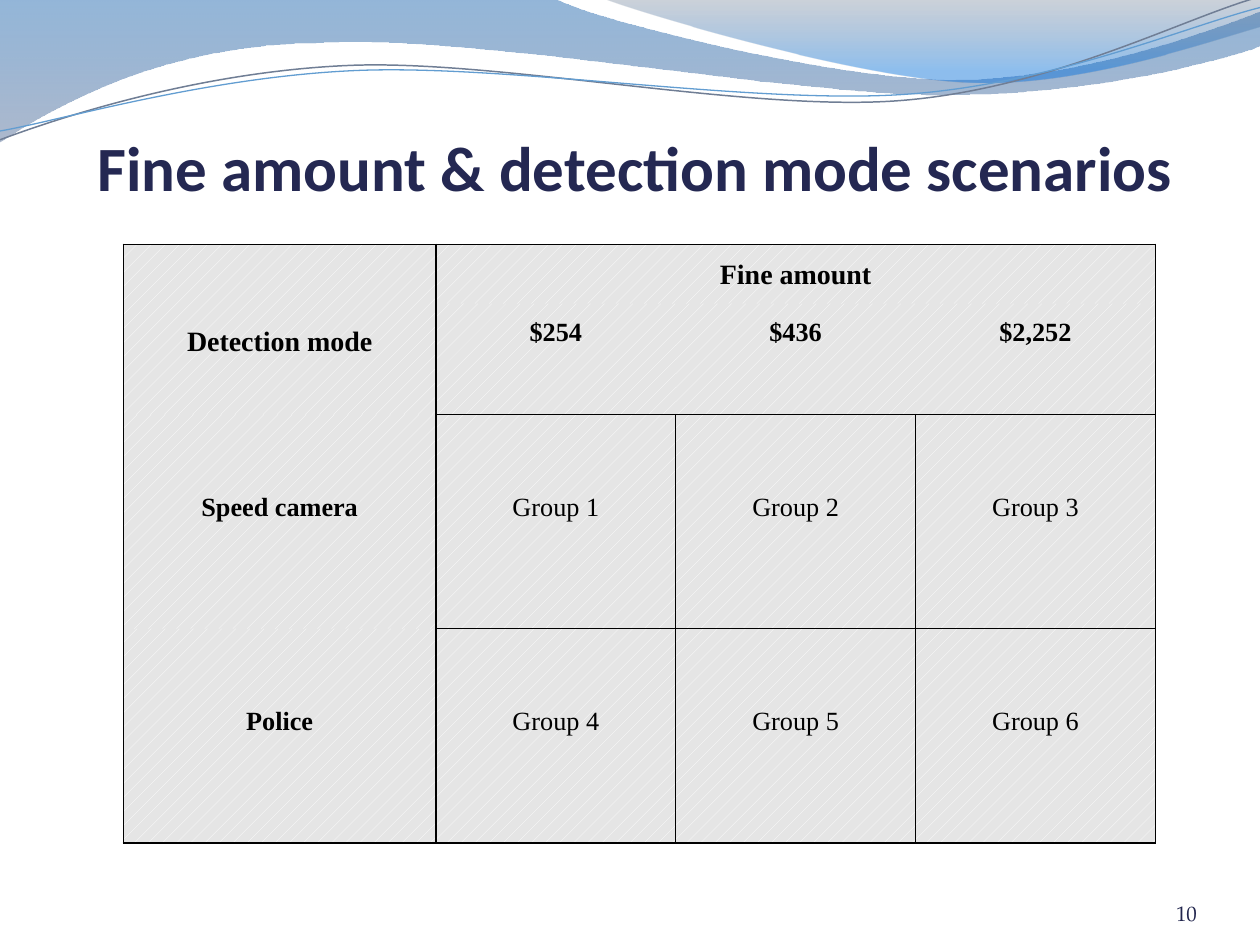
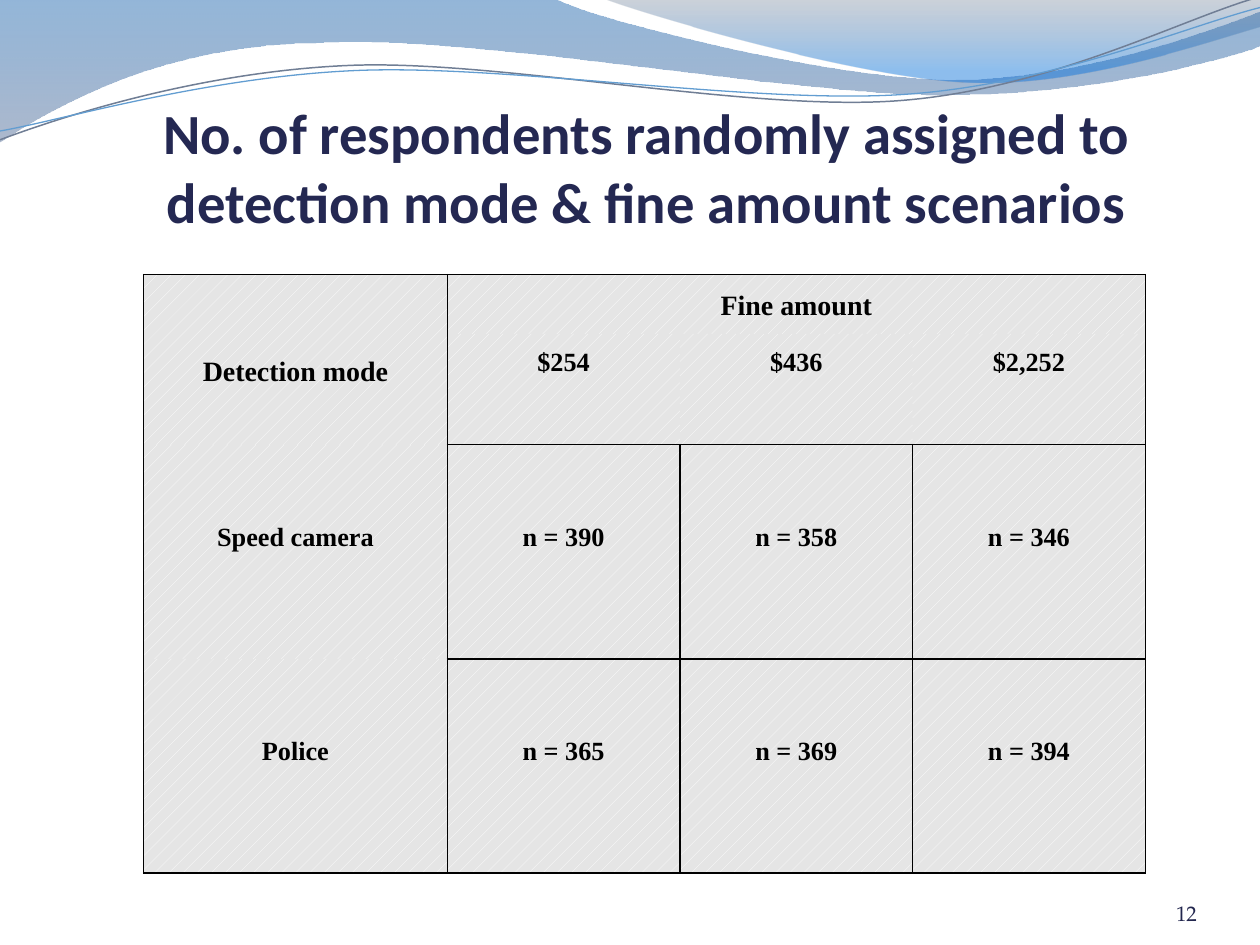
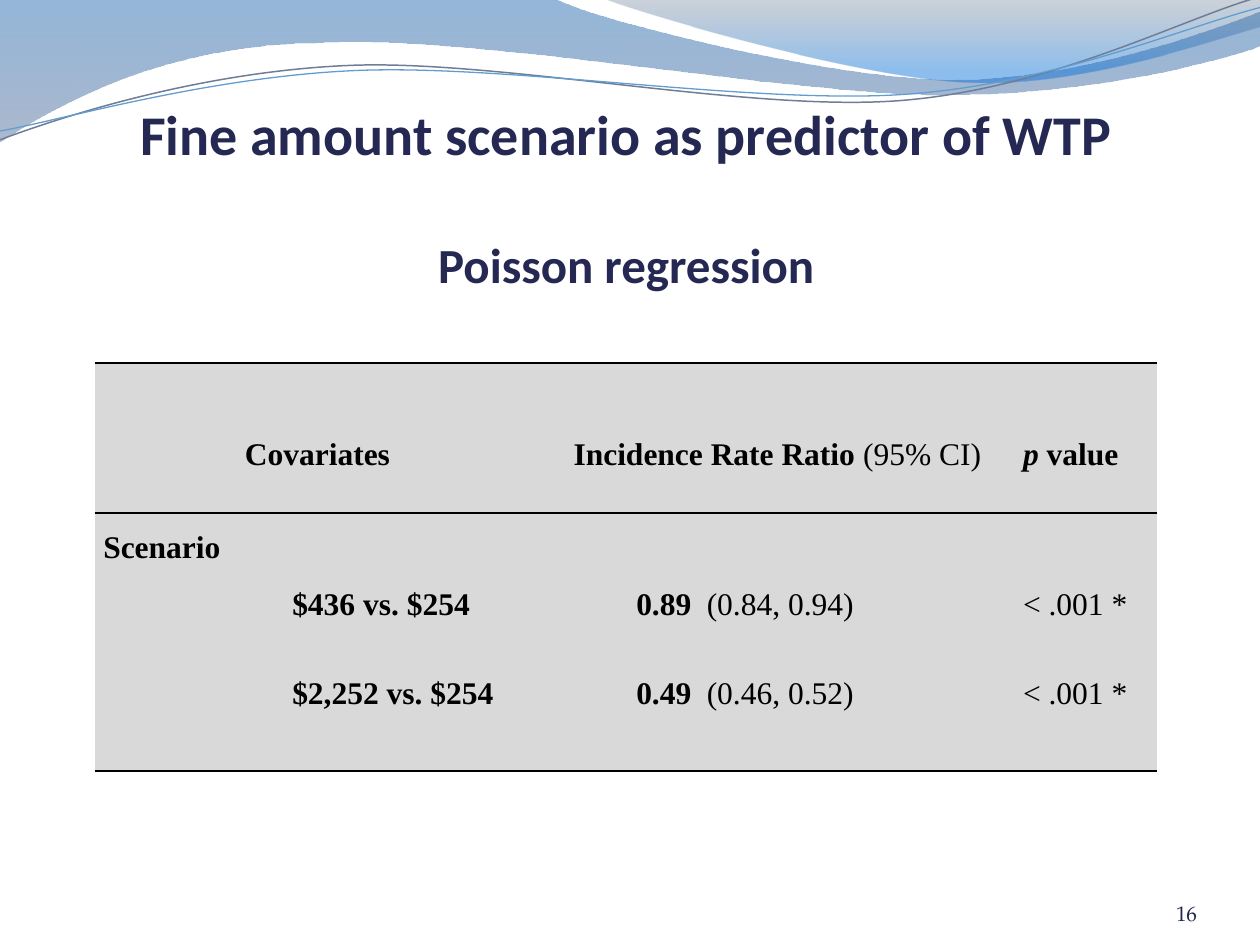
from lxml import etree
from pptx import Presentation
from pptx.dml.color import RGBColor
from pptx.enum.dml import MSO_PATTERN
from pptx.enum.text import MSO_ANCHOR, PP_ALIGN
from pptx.oxml.ns import qn
from pptx.util import Inches, Pt

TOP, MIDDLE, BOTTOM = MSO_ANCHOR.TOP, MSO_ANCHOR.MIDDLE, MSO_ANCHOR.BOTTOM
LEFT, CENTER, RIGHT = PP_ALIGN.LEFT, PP_ALIGN.CENTER, PP_ALIGN.RIGHT
HATCH = MSO_PATTERN.PERCENT_10

TITLE_FONT, NUMBER_FONT, TABLE_FONT = "Calibri", "TeX Gyre Pagella", "Times New Roman"
NAVY, NUMBER_NAVY, BLACK, WHITE = "242852", "22264E", "000000", "FFFFFF"
HATCH_GREY, FLAT_GREY = "E5E5E5", "D9D9D9"
PLAIN_TABLE = "{2D5ABB26-0587-4C30-8999-92F81FD0307C}"

BANDS = [
    ((0, -0.01),
     [[(4.4, -0.01)],
      [(4.76, 0.17), (6.64, 0.63), (7.58, 0.63)],
      [(8.53, 0.63), (9.58, 0.26), (10, 0.09)],
      [(10.01, 0.36)],
      [(9.83, 0.44), (8.7, 0.76), (7.46, 0.75)],
      [(6.22, 0.75), (3.82, 0.28), (2.57, 0.34)],
      [(1.29, 0.35), (0.46, 0.83), (-0.01, 1.13)],
      [(0, -0.01)]],
     [(0, "125EAA", 45), (1, "697FA4", 55)]),
    ((4.79, -0.01),
     [[(5.09, 0.11), (6.82, 0.62), (7.69, 0.65)],
      [(8.56, 0.69), (9.61, 0.32), (10, 0.21)],
      [(10, 0)],
      [(4.79, -0.01)]],
     [(0, "596982", 30), (0.8, "0670DA", 45)]),
]
WAVES = [
    ((0, 1.11),
     [[(0.48, 0.93), (1.58, 0.57), (2.77, 0.52)],
      [(3.95, 0.47), (5.93, 0.89), (7.13, 0.8)],
      [(8.33, 0.71), (9.38, 0.15), (9.98, -0.02)]],
     "707E95", 0.85),
    ((0, 1.04),
     [[(0.47, 0.96), (1.64, 0.61), (2.83, 0.56)],
      [(4.03, 0.51), (5.97, 0.83), (7.17, 0.75)],
      [(8.36, 0.67), (9.41, 0.21), (10, 0.06)]],
     "629DD1", 0.75),
]


def color(value):
    return RGBColor.from_string(value)


def add_outline(page, start, segments, closed):
    builder = page.shapes.build_freeform(*map(Inches, start))
    builder.add_line_segments(
        [(Inches(x), Inches(y)) for segment in segments for x, y in segment], close=closed)
    shape = builder.convert_to_shape()
    shape.shadow.inherit = False
    steps = iter(list(shape._element.iter(qn("a:lnTo"))))
    for segment in segments:
        curve = next(steps)
        if len(segment) == 3:
            curve.tag = qn("a:cubicBezTo")
            for _ in range(2):
                extra = next(steps)
                curve.append(extra[0])
                extra.getparent().remove(extra)
    return shape


def add_header_waves(page):
    for start, segments, stops in BANDS:
        band = add_outline(page, start, segments, True)
        band.line.fill.background()
        band.fill.gradient()
        band.fill.gradient_angle = 270
        for stop, (position, value, _) in zip(band.fill.gradient_stops, stops):
            stop.position = position
            stop.color.rgb = color(value)
        tones = band._element.spPr.iter(qn("a:srgbClr"))
        for tone, (_, _, opacity) in zip(tones, stops):
            etree.SubElement(tone, qn("a:alpha"), val=str(opacity * 1000))
    for start, segments, value, weight in WAVES:
        wave = add_outline(page, start, segments, False)
        wave.fill.background()
        wave.line.color.rgb = color(value)
        wave.line.width = Pt(weight)


def style_font(font, name, size, value, bold=None):
    font.name = name
    font.size = Pt(size)
    font.color.rgb = color(value)
    font.bold = bold


def add_text_frame(page, box, top_inset=0.0):
    frame = page.shapes.add_textbox(*map(Inches, box)).text_frame
    frame.word_wrap = True
    frame.vertical_anchor = BOTTOM
    frame.margin_left = frame.margin_right = frame.margin_bottom = 0
    frame.margin_top = Inches(top_inset)
    return frame


def add_title(page, box, lines, gap=0):
    frame = add_text_frame(page, box, 0.05)
    for index, (text, size) in enumerate(lines):
        para = frame.add_paragraph() if index else frame.paragraphs[0]
        para.text = text
        para.alignment = CENTER
        if index:
            para.space_before = Pt(gap)
        style_font(para.font, TITLE_FONT, size, NAVY, True)


def add_page_number(page, number):
    para = add_text_frame(page, (8.67, 6.95, 0.83, 0.4)).paragraphs[0]
    para.text = str(number)
    para.alignment = RIGHT
    style_font(para.font, NUMBER_FONT, 12, NUMBER_NAVY)


def add_plain_table(page, box, widths, heights):
    frame = page.shapes.add_table(len(heights), len(widths), *map(Inches, box))
    table = frame.table
    table.first_row = table.horz_banding = False
    table._tbl.tblPr.find(qn("a:tableStyleId")).text = PLAIN_TABLE
    for column, width in zip(table.columns, widths):
        column.width = Inches(width)
    for row, height in zip(table.rows, heights):
        row.height = Inches(height)
    return table


def set_borders(cell, sides):
    properties = cell._tc.get_or_add_tcPr()
    for side in "LRTB":
        line = etree.SubElement(properties, qn(f"a:ln{side}"), w=str(Pt(1)))
        if side in sides:
            fill = etree.SubElement(line, qn("a:solidFill"))
            etree.SubElement(fill, qn("a:srgbClr"), val=BLACK)
        else:
            etree.SubElement(line, qn("a:noFill"))


def fill_cell(cell, spans, size, align=CENTER, top=0.0, left=0.07, tab=None, anchor=TOP):
    cell.margin_left, cell.margin_right = Inches(left), Inches(0.07)
    cell.margin_top, cell.margin_bottom = Inches(top), Inches(0)
    cell.vertical_anchor = anchor
    para = cell.text_frame.paragraphs[0]
    para.alignment = align
    para.line_spacing = 1.5
    if tab:
        tabs = etree.SubElement(para._p.get_or_add_pPr(), qn("a:tabLst"))
        etree.SubElement(tabs, qn("a:tab"), pos=str(Inches(tab)), algn="l")
    style_font(para.font, TABLE_FONT, size, BLACK)
    for text, bold, italic in spans:
        span = para.add_run()
        span.text = text
        style_font(span.font, TABLE_FONT, size, BLACK, bold)
        span.font.italic = italic


def scenario_sides(row, column):
    if column == 0:
        return "LR" + {0: "T", 3: "B"}.get(row, "")
    if row > 1:
        return "LRTB"
    if row == 0:
        return {1: "LRT", 3: "RT"}.get(column, "T")
    return "B" + {1: "L", 3: "R"}.get(column, "")


def add_scenario_table(page, box, mode_width, groups, bold_groups):
    amount_width = (box[2] - mode_width) / 3
    table = add_plain_table(page, box, [mode_width] + [amount_width] * 3,
                            [0.47, 0.88, 1.7, 1.7])
    table.cell(0, 0).merge(table.cell(1, 0))
    table.cell(0, 1).merge(table.cell(0, 3))
    texts = [["Detection mode", "Fine amount", "", ""],
             ["", "$254", "$436", "$2,252"],
             ["Speed camera"] + groups[:3],
             ["Police"] + groups[3:]]
    for row, values in enumerate(texts):
        for column, text in enumerate(values):
            cell = table.cell(row, column)
            set_borders(cell, scenario_sides(row, column))
            cell.fill.patterned()
            cell.fill.pattern = HATCH
            cell.fill.fore_color.rgb = color(WHITE)
            cell.fill.back_color.rgb = color(HATCH_GREY)
            if text:
                bold = bold_groups or row < 2 or column == 0
                corner = row == 0 and column == 0
                top = 0.08 if corner else 0.51 if row > 1 else 0
                fill_cell(cell, [(text, bold, False)], 15 if row else 16,
                          top=top, anchor=MIDDLE if corner else TOP)


def add_regression_table(page, box):
    table = add_plain_table(page, box, [3.54, 3.76, 1.13], [1.19, 0.45, 0.71, 0.89])
    for row in range(4):
        for column in range(3):
            cell = table.cell(row, column)
            set_borders(cell, {0: "TB", 1: "T", 3: "B"}.get(row, ""))
            cell.fill.solid()
            cell.fill.fore_color.rgb = color(FLAT_GREY)
    headings = [([("Covariates", True, False)], CENTER),
                ([("Incidence Rate Ratio ", True, False), ("(95% CI)", False, False)], CENTER),
                ([("p ", True, True), ("value", True, False)], LEFT)]
    for column, (spans, align) in enumerate(headings):
        fill_cell(table.cell(0, column), spans, 18, align, top=0.45)
    fill_cell(table.cell(1, 0), [("Scenario", True, False)], 18, LEFT)
    results = [("$436 vs. $254", "0.89", "(0.84, 0.94)"),
               ("$2,252 vs. $254", "0.49", "(0.46, 0.52)")]
    for row, (contrast, ratio, interval) in enumerate(results, 2):
        fill_cell(table.cell(row, 0), [(contrast, True, False)], 18, LEFT, left=1.57)
        fill_cell(table.cell(row, 1),
                  [(ratio + "\t", True, False), (interval, False, False)],
                  18, LEFT, left=0.76, tab=0.56)
        fill_cell(table.cell(row, 2), [("< .001 *", False, False)], 18, LEFT)


def add_page(deck, number):
    page = deck.slides.add_slide(deck.slide_layouts[6])
    add_header_waves(page)
    add_page_number(page, number)
    return page


def main():
    deck = Presentation()
    deck.slide_width, deck.slide_height = Inches(10), Inches(7.5)

    page = add_page(deck, 10)
    add_title(page, (0.5, 0.77, 9.08, 0.85),
              [("Fine amount & detection mode scenarios", 36)])
    add_scenario_table(page, (0.98, 1.94, 8.19, 4.75), 2.48,
                       [f"Group {number}" for number in range(1, 7)], False)

    page = add_page(deck, 12)
    add_title(page, (0.59, 0.84, 9.08, 1.02),
              [("No. of respondents randomly assigned to "
                "detection mode & fine amount scenarios", 32.4)])
    add_scenario_table(page, (1.14, 2.18, 7.95, 4.75), 2.41,
                       [f"n = {count}" for count in (390, 358, 346, 365, 369, 394)], True)

    page = add_page(deck, 16)
    add_title(page, (0.43, 0.76, 9.08, 1.57),
              [("Fine amount scenario as predictor of WTP", 32),
               ("Poisson regression", 28)], gap=39)
    add_regression_table(page, (0.75, 2.88, 8.43, 3.24))

    deck.save("out.pptx")


if __name__ == "__main__":
    main()
